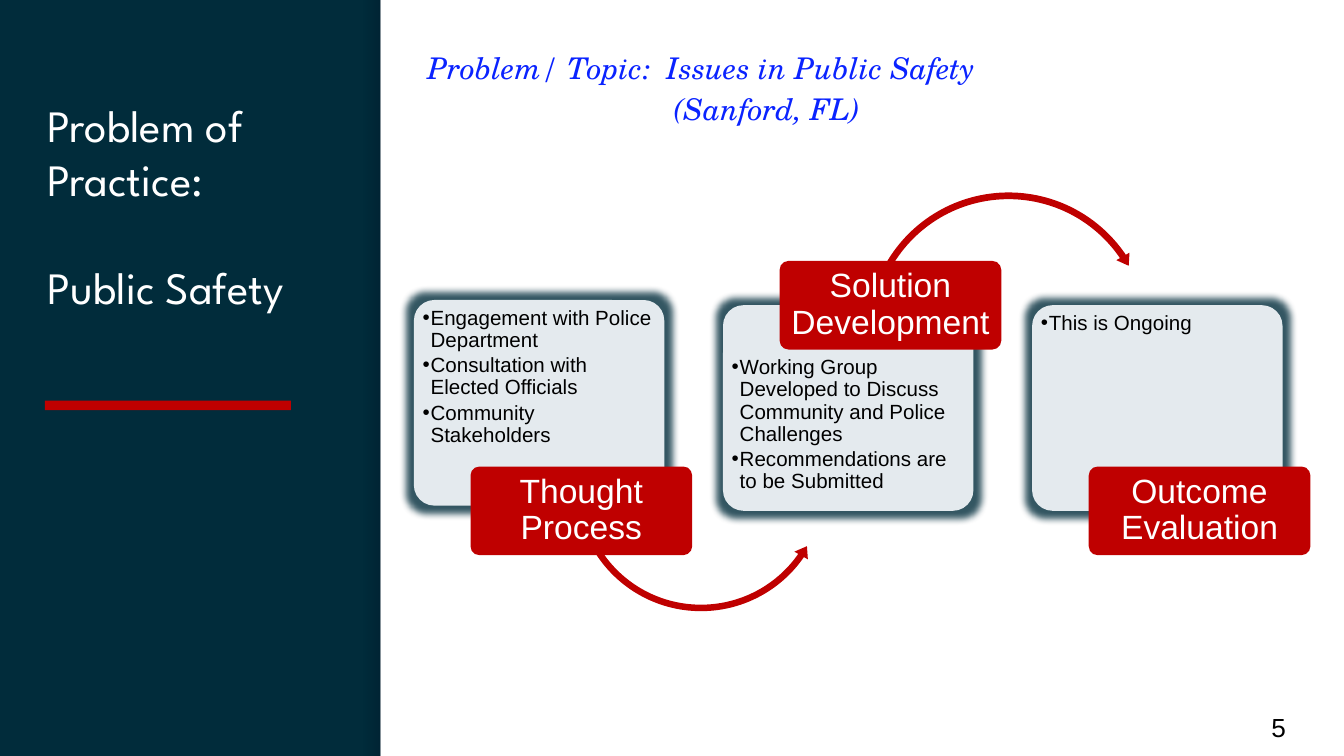
from typing import NamedTuple

from lxml.etree import SubElement
from pptx import Presentation
from pptx.dml.color import RGBColor
from pptx.enum.shapes import MSO_SHAPE
from pptx.enum.text import MSO_ANCHOR, MSO_AUTO_SIZE, PP_ALIGN
from pptx.oxml.ns import qn
from pptx.util import Inches, Pt

NAVY, RED, WHITE, BLACK = "012C3B", "BF0000", "FFFFFF", "000000"
BLUE, CARD, SHADE = "0A23FF", "F8FBFE", "000014"


class Box(NamedTuple):
    left: float
    top: float
    width: float
    height: float

    def share(self, left, top, width, height):
        return Box(self.left + left * self.width, self.top + top * self.height,
                   width * self.width, height * self.height)

    def lengths(self):
        return [Inches(value) for value in self]


def color(value):
    return RGBColor.from_string(value)


def set_alpha(color_element, percent):
    SubElement(color_element, qn("a:alpha"), val=str(percent * 1000))


def add_panel(slide, box, fill, kind=MSO_SHAPE.RECTANGLE, adjustments=()):
    shape = slide.shapes.add_shape(kind, *box.lengths())
    shape.shadow.inherit = False
    shape.fill.solid()
    shape.fill.fore_color.rgb = color(fill)
    shape.line.fill.background()
    for index, value in enumerate(adjustments):
        shape.adjustments[index] = value
    return shape


def add_bullet(paragraph, indent):
    properties = paragraph._p.get_or_add_pPr()
    properties.set("marL", str(Inches(indent)))
    properties.set("indent", str(-Inches(indent)))
    SubElement(properties, qn("a:buFont"), typeface="Arial")
    SubElement(properties, qn("a:buChar"), char="•")


def write_text(shape, text, *, font, size, fill=BLACK, italic=False, aligns=(PP_ALIGN.LEFT,),
               anchor=MSO_ANCHOR.TOP, margins=(0.1, 0.1, 0.1, 0.1), spacing=1.0,
               before=0, after=0, bullet=False):
    frame = shape.text_frame
    frame.word_wrap = True
    frame.auto_size = MSO_AUTO_SIZE.NONE
    frame.vertical_anchor = anchor
    frame.margin_left, frame.margin_top, frame.margin_right, frame.margin_bottom = map(Inches, margins)
    frame.text = text
    for index, paragraph in enumerate(frame.paragraphs):
        if bullet:
            add_bullet(paragraph, 0.06)
        paragraph.alignment = aligns[min(index, len(aligns) - 1)]
        paragraph.line_spacing = spacing
        paragraph.space_before = Pt(before if index else 0)
        paragraph.space_after = Pt(after)
        paragraph.font.name = font
        paragraph.font.size = Pt(size)
        paragraph.font.italic = italic
        paragraph.font.color.rgb = color(fill)


def add_sidebar(slide, box):
    edge = add_panel(slide, box.share(0.955, 0, 0.045, 1), SHADE)
    edge.fill.gradient()
    edge.fill.gradient_angle = 0
    for stop in edge.fill.gradient_stops:
        stop.color.rgb = color(SHADE)
    for element, percent in zip(edge._element.spPr.iter(qn("a:srgbClr")), (0, 20)):
        set_alpha(element, percent)
    title = slide.shapes.title
    title.left, title.top, title.width, title.height = box.share(0.09, 0.112, 0.792, 0.774).lengths()
    write_text(title, "Problem of Practice:\nPublic Safety", font="League Spartan",
               size=24, fill=WHITE, before=29)
    add_panel(slide, box.share(0.118, 0.53, 0.647, 0.0125), RED)


def add_heading(slide, box):
    heading = slide.shapes.add_textbox(*box.share(0.035, 0.041, 0.732, 0.235).lengths())
    write_text(heading, "Problem/ Topic:  Issues in Public Safety\n(Sanford, FL)",
               font="TeX Gyre Schola", size=16, fill=BLUE, italic=True, spacing=1.15,
               aligns=(PP_ALIGN.LEFT, PP_ALIGN.CENTER))


def add_page_number(slide, box):
    number = slide.shapes.add_textbox(*box.share(0.911, 0.923, 0.084, 0.077).lengths())
    write_text(number, "5", font="Arial", size=14, anchor=MSO_ANCHOR.MIDDLE)


def add_stage(slide, box, name, points, card_top, tag_top, text_inset, arrow=None):
    card = add_panel(slide, box.share(0, card_top, 0.81, 0.478), CARD,
                     MSO_SHAPE.ROUNDED_RECTANGLE, (0.1,))
    set_alpha(next(card._element.spPr.iter(qn("a:srgbClr"))), 90)
    effects = card._element.spPr.find(qn("a:effectLst"))
    glow = SubElement(effects, qn("a:glow"), rad=str(Pt(8)))
    set_alpha(SubElement(glow, qn("a:srgbClr"), val=NAVY), 80)
    write_text(card, "\n".join(points), font="Arial", size=11, spacing=0.9, after=1.8,
               margins=(0.02, text_inset, 0.01, 0), bullet=True)
    if arrow:
        kind, place, adjustments = arrow
        add_panel(slide, box.share(*place), RED, kind, adjustments)
    tag = add_panel(slide, box.share(0.183, tag_top, 0.717, 0.206), RED,
                    MSO_SHAPE.ROUNDED_RECTANGLE, (0.1,))
    write_text(tag, name, font="Arial", size=18, fill=WHITE, aligns=(PP_ALIGN.CENTER,),
               anchor=MSO_ANCHOR.MIDDLE, margins=(0.04, 0.03, 0.04, 0.03), spacing=0.9)


def add_process(slide, box, stages):
    for index, stage in enumerate(stages):
        add_stage(slide, box.share(index / len(stages), 0, 1 / len(stages), 1), **stage)


STAGES = [
    dict(name="Thought Process", card_top=0.26, tag_top=0.647, text_inset=0.01,
         points=["Engagement with Police Department", "Consultation with Elected Officials",
                 "Community Stakeholders"],
         arrow=(MSO_SHAPE.LEFT_CIRCULAR_ARROW, (0.509, 0.391, 0.839, 0.603),
                (0.025, 3.094, 20.849, 90.245, 0.03))),
    dict(name="Solution Development", card_top=0.272, tag_top=0.169, text_inset=0.34,
         points=["Working Group Developed to Discuss Community and Police Challenges",
                 "Recommendations are to be Submitted"],
         arrow=(MSO_SHAPE.CIRCULAR_ARROW, (0.452, 0, 0.943, 0.678),
                (0.023, 2.738, 195.507, 125.755, 0.026))),
    dict(name="Outcome Evaluation", card_top=0.272, tag_top=0.647, text_inset=0.01,
         points=["This is Ongoing"]),
]


def main():
    presentation = Presentation()
    page = Box(0, 0, 10, 10 * 9 / 16)
    presentation.slide_width, presentation.slide_height = Inches(page.width), Inches(page.height)
    slide = presentation.slides.add_slide(presentation.slide_layouts[5])
    slide.background.fill.solid()
    slide.background.fill.fore_color.rgb = color(NAVY)
    content = page.share(0.283, 0, 0.717, 1)
    add_panel(slide, content, WHITE)
    add_sidebar(slide, page.share(0, 0, 0.283, 1))
    add_heading(slide, content)
    add_process(slide, page.share(0.308, 0.249, 0.69, 0.569), STAGES)
    add_page_number(slide, content)
    presentation.save("out.pptx")


if __name__ == "__main__":
    main()
